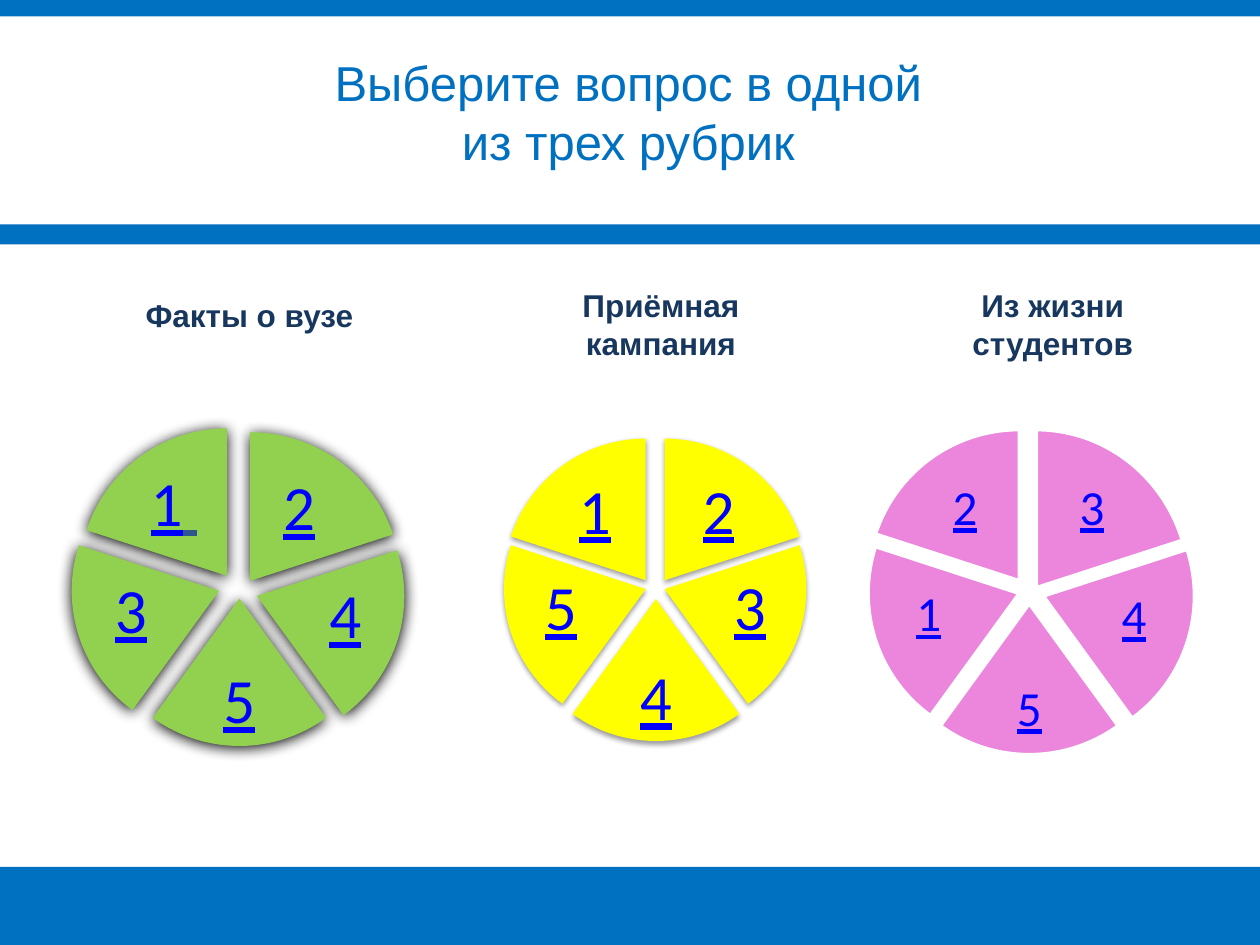
from lxml.etree import SubElement
from pptx import Presentation
from pptx.dml.color import RGBColor
from pptx.enum.shapes import MSO_SHAPE as Shape
from pptx.enum.text import MSO_ANCHOR as Anchor, PP_ALIGN as Align
from pptx.oxml.ns import qn
from pptx.util import Pt

THEME = {
    "blue": "0070C0", "white": "FFFFFF", "navy": "17375E", "link": "0000FF",
    "tail": "2B578D", "green": "92D050", "yellow": "FFFF00", "pink": "EC86DD",
    "black": "000000", "text_font": "Arial", "number_font": "Calibri",
    "title": 28, "heading": 18, "number": 36, "small_number": 28, "small_tail": 20,
}

BANDS = [
    ((-2, 495.4, 723, 44.6), "blue"),
    ((0, -0.7, 720, 140.4), "blue"),
    ((-2, 9.4, 723, 118.8), "white"),
]
TITLE = ("Выберите вопрос в одной из трех рубрик", (167.8, 26.6, 382.3, 74.9))
HEADINGS = [
    ("Факты о вузе", (65.5, 165.6, 154.1, 28.8)),
    ("Приёмная кампания", (308.2, 159.8, 139, 51.1)),
    ("Из жизни студентов", (540, 159.8, 123.1, 51.1)),
]
WHEELS = [
    {"fill": "green", "size": 168.5, "first": (172.1, 169.9), "font": "number",
     "inset": 3.6, "shadow": (100, 8.5, 1), "numbers": "24531",
     "tails": {"2": ("small_tail", False), "1": ("number", True)},
     "corners": [(56.9, 247), (62.6, 256.3), (52.6, 257.8), (41, 253.4), (45.4, 244.8)]},
    {"fill": "yellow", "size": 162, "first": (162, 162), "font": "number",
     "inset": 3.6, "shadow": (38, 3.1, 1.6), "numbers": "23451", "tails": {},
     "corners": [(298.8, 250.6), (298.8, 255.6), (293.8, 261.4), (288, 255.6), (288, 250.6)]},
    {"fill": "pink", "size": 172.8, "first": (175, 180.7), "font": "small_number",
     "inset": 2.8, "shadow": None, "numbers": "34512", "tails": {},
     "corners": [(504.7, 245.5), (509.8, 254.2), (501.8, 258.5), (496.1, 252.7), (496.1, 245.5)]},
]
LABEL_SHARES = [
    (0.52, 0.15, 0.34, 0.23), (0.65, 0.45, 0.3, 0.25), (0.32, 0.75, 0.36, 0.21),
    (0.05, 0.45, 0.3, 0.25), (0.15, 0.15, 0.34, 0.23),
]
FIRST_ANGLE, STEP = 270, 72
ADJUSTMENT_PER_DEGREE = 0.6


def color(name):
    return RGBColor.from_string(THEME[name])


def add_filled(slide, preset, box, fill):
    shape = slide.shapes.add_shape(preset, *map(Pt, box))
    shape.shadow.inherit = False
    shape.fill.solid()
    shape.fill.fore_color.rgb = color(fill)
    shape.line.fill.background()
    return shape


def set_font(font, family, size, fill):
    font.name, font.size = THEME[family], Pt(THEME[size])
    font.color.rgb = color(fill)


def add_text(slide, text, box, family, size, fill):
    frame = slide.shapes.add_textbox(*map(Pt, box)).text_frame
    frame.word_wrap = True
    paragraph = frame.paragraphs[0]
    paragraph.alignment = Align.CENTER
    paragraph.add_run().text = text
    set_font(paragraph.font, family, size, fill)
    return frame, paragraph


def add_shadow(shape, opacity, blur, distance):
    effects = shape._element.spPr.find(qn("a:effectLst"))
    shadow = SubElement(effects, qn("a:outerShdw"), blurRad=str(Pt(blur)),
                        dist=str(Pt(distance)), dir="5400000", rotWithShape="0")
    tint = SubElement(shadow, qn("a:srgbClr"), val=THEME["black"])
    SubElement(tint, qn("a:alpha"), val=str(opacity * 1000))


def add_slice(slide, wheel, index):
    size = wheel["size"]
    left, top = wheel["corners"][index]
    extent = wheel["first"] if index == 0 else (size, size)
    shape = add_filled(slide, Shape.PIE, (left, top, *extent), wheel["fill"])
    for edge in (0, 1):
        angle = (FIRST_ANGLE + STEP * (index + edge)) % 360
        shape.adjustments[edge] = angle * ADJUSTMENT_PER_DEGREE
    if wheel["shadow"]:
        add_shadow(shape, *wheel["shadow"])
    else:
        shape.line.color.rgb = color("white")
        shape.line.width = Pt(2)


def add_number(slide, wheel, index):
    number = wheel["numbers"][index]
    x, y, width, height = (share * wheel["size"] for share in LABEL_SHARES[index])
    left, top = wheel["corners"][index]
    frame, paragraph = add_text(slide, number, (left + x, top + y, width, height),
                                "number_font", wheel["font"], "link")
    frame.vertical_anchor = Anchor.MIDDLE
    frame.margin_left = frame.margin_right = Pt(wheel["inset"])
    frame.margin_top = frame.margin_bottom = Pt(wheel["inset"])
    paragraph.line_spacing = 0.9
    paragraph.font.underline = True
    if number in wheel["tails"]:
        size, underline = wheel["tails"][number]
        tail = paragraph.add_run()
        tail.text = " "
        set_font(tail.font, "number_font", size, "tail")
        tail.font.underline = underline


def main():
    """Build the question-choice slide with three five-part wheels."""
    presentation = Presentation()
    presentation.slide_width, presentation.slide_height = Pt(720), Pt(540)
    slide = presentation.slides.add_slide(presentation.slide_layouts[6])
    for box, fill in BANDS:
        add_filled(slide, Shape.RECTANGLE, box, fill)
    add_text(slide, *TITLE, "text_font", "title", "blue")
    for wheel in WHEELS:
        for index in range(len(wheel["numbers"])):
            add_slice(slide, wheel, index)
            add_number(slide, wheel, index)
    for text, box in HEADINGS:
        _, paragraph = add_text(slide, text, box, "text_font", "heading", "navy")
        paragraph.font.bold = True
    presentation.save("out.pptx")


if __name__ == "__main__":
    main()
